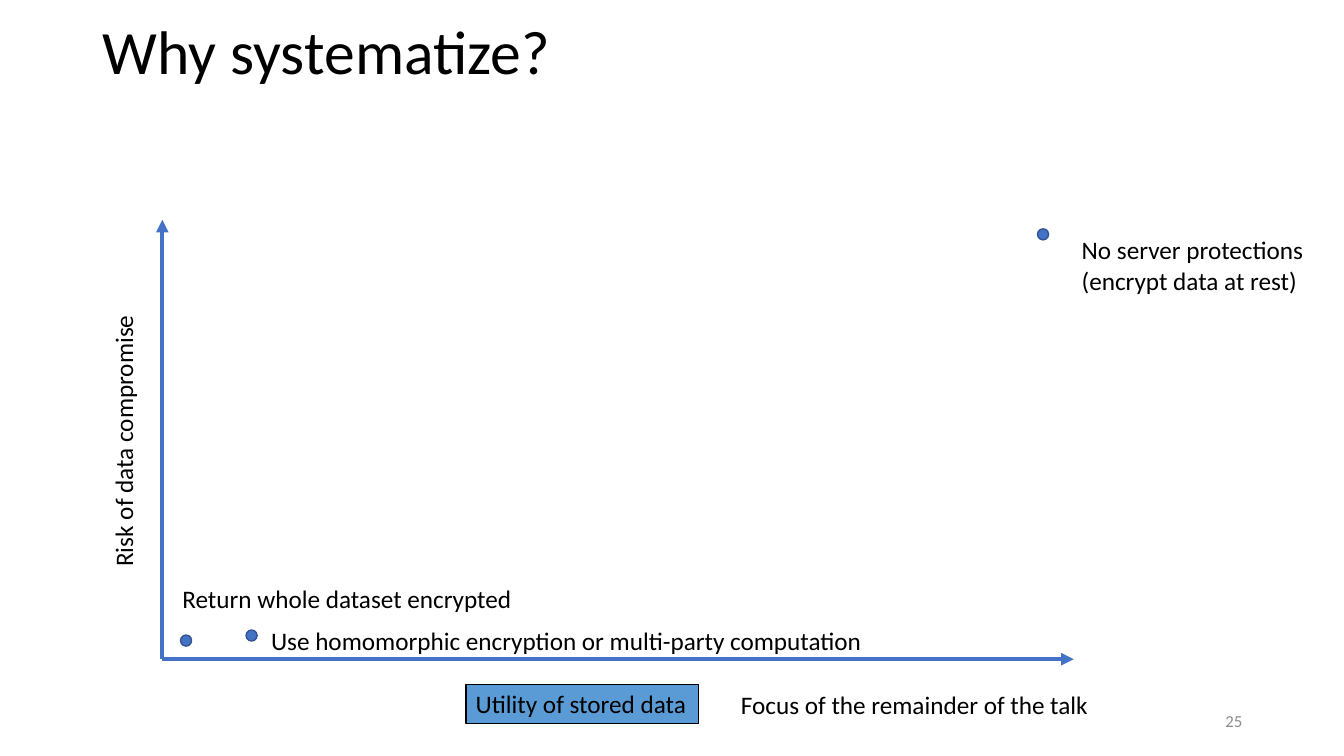
from collections import namedtuple

from pptx import Presentation
from pptx.dml.color import RGBColor
from pptx.enum.shapes import MSO_CONNECTOR, MSO_SHAPE
from pptx.enum.text import MSO_ANCHOR, MSO_AUTO_SIZE, PP_ALIGN
from pptx.oxml.ns import qn
from pptx.util import Pt
from lxml import etree

STRAIGHT = MSO_CONNECTOR.STRAIGHT
RECTANGLE, OVAL = MSO_SHAPE.RECTANGLE, MSO_SHAPE.OVAL
MIDDLE, TOP = MSO_ANCHOR.MIDDLE, MSO_ANCHOR.TOP
LEFT, RIGHT = PP_ALIGN.LEFT, PP_ALIGN.RIGHT
NO_FIT, GROW = MSO_AUTO_SIZE.NONE, MSO_AUTO_SIZE.SHAPE_TO_FIT_TEXT

EMU_PER_PX = 9144  # 100 px to the inch
LABEL_HEIGHT = 40
DOT_SIZE = 11

Box = namedtuple("Box", "left top width height")


class Theme:
    font = "Calibri"
    title_size, label_size, number_size = 44, 18, 12
    axis_width, outline_width = 3, 1
    ink = RGBColor.from_string("000000")
    muted = RGBColor.from_string("8C8C8C")
    accent = RGBColor.from_string("4472C4")
    accent_edge = RGBColor.from_string("325491")
    highlight = RGBColor.from_string("5B9BD5")


def px(*lengths):
    return [length * EMU_PER_PX for length in lengths]


def write(frame, lines, size, color, align=LEFT):
    para = frame.paragraphs[0]
    para.alignment = align
    for index, line in enumerate(lines):
        if index:
            para.add_line_break()
        span = para.add_run()
        span.text = line
        span.font.name = Theme.font
        span.font.size = Pt(size)
        span.font.color.rgb = color
    return para


def add_label(shapes, box, *lines, rotation=0):
    label = shapes.add_textbox(*px(*box))
    label.rotation = rotation
    frame = label.text_frame
    frame.word_wrap = False
    frame.auto_size = GROW
    frame.vertical_anchor = TOP
    write(frame, lines, Theme.label_size, Theme.ink)


def add_filled(shapes, kind, box, fill, edge):
    shape = shapes.add_shape(kind, *px(*box))
    shape.shadow.inherit = False
    shape.fill.solid()
    shape.fill.fore_color.rgb = fill
    shape.line.color.rgb = edge
    shape.line.width = Pt(Theme.outline_width)


def add_axis(shapes, start, end):
    axis = shapes.add_connector(STRAIGHT, *px(*start, *end))
    axis.line.color.rgb = Theme.accent
    axis.line.width = Pt(Theme.axis_width)
    etree.SubElement(axis.line._get_or_add_ln(), qn("a:tailEnd"), type="triangle")
    etree.SubElement(axis._element.spPr, qn("a:effectLst"))


def place_title(slide, box, text):
    title = slide.shapes.title
    title.left, title.top, title.width, title.height = px(*box)
    frame = title.text_frame
    frame.auto_size = NO_FIT
    frame.vertical_anchor = MIDDLE
    write(frame, [text], Theme.title_size, Theme.ink).line_spacing = 0.9


def place_focus(slide, box):
    """Highlight the horizontal axis label and say why."""
    group = slide.shapes.add_group_shape().shapes
    add_filled(group, RECTANGLE, Box(box.left, box.top, 231, 39),
               Theme.highlight, Theme.ink)
    add_label(group, Box(box.left + 263, box.top, box.width - 263, LABEL_HEIGHT),
              "Focus of the remainder of the talk")


def place_axes(slide, box):
    origin = (box.left, box.top + box.height)
    add_axis(slide.shapes, origin, (box.left, box.top))
    add_axis(slide.shapes, origin, (box.left + box.width, origin[1]))
    add_label(slide.shapes, Box(box.left + 301, origin[1] + 24, 231, LABEL_HEIGHT),
              "Utility of stored data")
    add_label(slide.shapes, Box(box.left - 175, box.top + 198, 272, LABEL_HEIGHT),
              "Risk of data compromise", rotation=270)


def place_points(slide, box):
    """Plot each approach: dot offset, label offset and size, label lines."""
    points = [
        ((868, 9), (902, 10, 248, 71),
         ["No server protections ", "(encrypt data at rest)"]),
        ((18, 412), (10, 356, 351, LABEL_HEIGHT),
         ["Return whole dataset encrypted"]),
        ((83, 407), (98, 397, 613, LABEL_HEIGHT),
         ["Use homomorphic encryption or multi-party computation"]),
    ]
    for (dot_x, dot_y), (label_x, label_y, width, height), lines in points:
        group = slide.shapes.add_group_shape().shapes
        add_filled(group, OVAL,
                   Box(box.left + dot_x, box.top + dot_y, DOT_SIZE, DOT_SIZE),
                   Theme.accent, Theme.accent_edge)
        add_label(group, Box(box.left + label_x, box.top + label_y, width, height),
                  *lines)


def place_number(slide, box, number):
    frame = slide.shapes.add_textbox(*px(*box)).text_frame
    frame.word_wrap = True
    frame.vertical_anchor = MIDDLE
    write(frame, [number], Theme.number_size, Theme.muted, RIGHT)


def build_slide(deck):
    slide = deck.slides.add_slide(deck.slide_layouts.get_by_name("Title Only"))
    plot = Box(161, 218, 904, 436)
    place_focus(slide, Box(462, 679, 632, LABEL_HEIGHT))
    place_title(slide, Box(92, -18, 1150, 145), "Why systematize?")
    place_axes(slide, plot)
    place_points(slide, plot)
    place_number(slide, Box(942, 695, 300, LABEL_HEIGHT), "25")


def main():
    deck = Presentation()
    deck.slide_width, deck.slide_height = px(1333, 750)
    build_slide(deck)
    deck.save("out.pptx")


if __name__ == "__main__":
    main()
